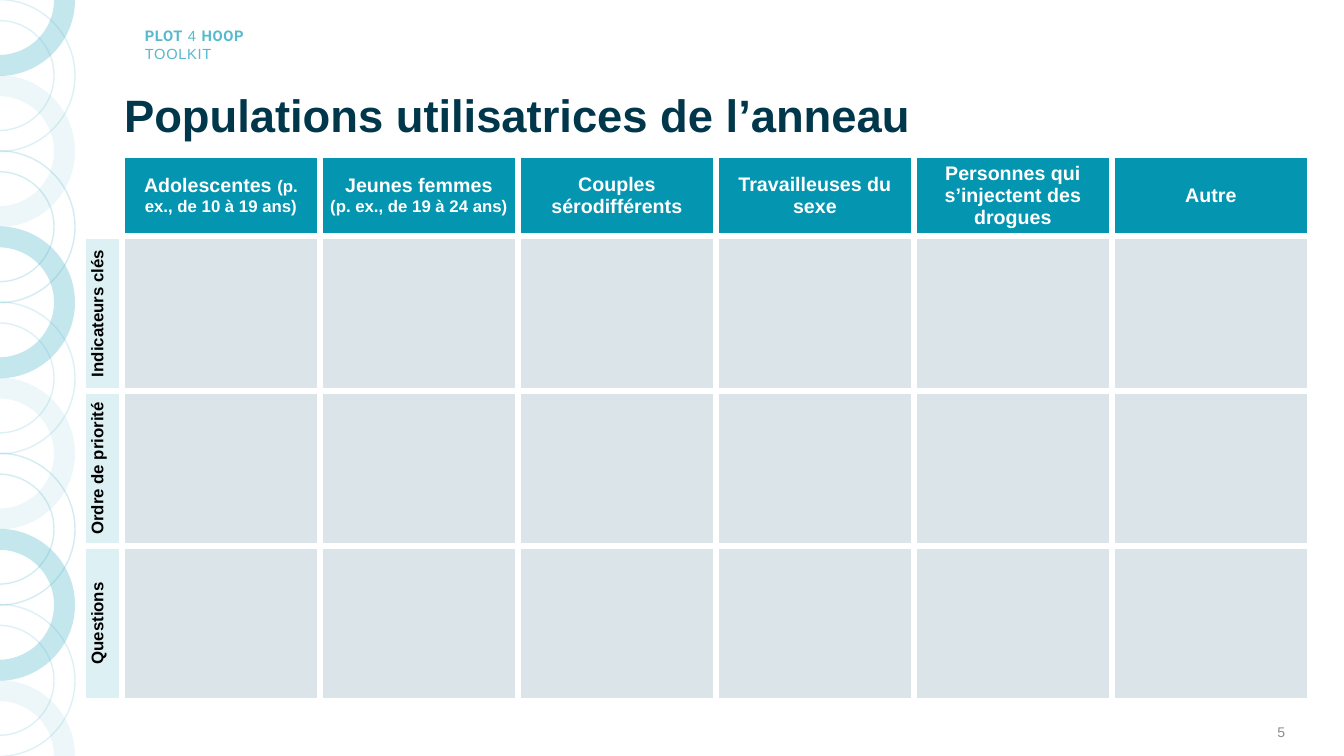
from dataclasses import dataclass
from math import cos, radians, sin
from typing import Optional

from lxml.etree import SubElement
from pptx import Presentation
from pptx.dml.color import RGBColor
from pptx.dml.fill import FillFormat
from pptx.enum.text import MSO_ANCHOR, PP_ALIGN
from pptx.oxml.ns import qn
from pptx.slide import Slide
from pptx.table import _Cell
from pptx.text.text import TextFrame
from pptx.util import Pt

SCALE = 914400 / 100.8
PAGE_WIDTH, PAGE_HEIGHT = 1344, 756
WHITE = RGBColor(0xFF, 0xFF, 0xFF)
BLACK = RGBColor(0x00, 0x00, 0x00)
NAVY = RGBColor(0x00, 0x37, 0x4B)
GREY = RGBColor(0x8C, 0x8C, 0x8C)
SKY = RGBColor(0x56, 0xB9, 0xCC)
TEAL = RGBColor(0x04, 0x95, 0xB0)
PALE_TEAL = RGBColor(0xDD, 0xF1, 0xF5)
PALE_GREY = RGBColor(0xDB, 0xE5, 0xE9)

RING_COUNT = 11
RING_CENTRE_X = -1
RING_OUTER, RING_INNER = 76, 55
QUARTER = 90
DEGREE = 60000
TABLE_LEFT, TABLE_TOP = 83, 155
LABEL_WIDTH, COLUMN_WIDTH = 39, 198
HEADER_HEIGHT, ROW_HEIGHT = 81, 155
CELL_MARGIN = 8


@dataclass(frozen=True)
class Span:
    text: str
    size: float
    bold: bool = True
    font: str = "Arial"
    spacing: float = 0


@dataclass(frozen=True)
class RingStyle:
    filled: bool
    opacity: int


@dataclass(frozen=True)
class Corner:
    radius: int
    angle: int


RING_STYLES = [
    RingStyle(True, 35),
    RingStyle(False, 20),
    RingStyle(True, 10),
    RingStyle(False, 25),
]
BREAK = Span("\n", 10.5)
TOOLKIT_NAME = [[
    Span("PLOT", 10.5, font="Roboto", spacing=0.5),
    Span(" 4 ", 10.5, bold=False, spacing=0.5),
    Span("HOOP", 10.5, font="Roboto", spacing=0.5),
    BREAK,
    Span("TOOLKIT", 10.5, bold=False, spacing=0.5),
]]
POPULATIONS = [
    [[Span("Adolescentes ", 14), Span("(p. ex., de 10 à 19 ans)", 12)]],
    [[Span("Jeunes femmes", 14)], [Span("(p. ex., de 19 à 24 ans)", 12)]],
    [[Span("Couples sérodifférents", 14)]],
    [[Span("Travailleuses du sexe", 14)]],
    [[Span("Personnes qui s’injectent des drogues", 14)]],
    [[Span("Autre", 14)]],
]
TOPICS = ["Indicateurs clés", "Ordre de priorité", "Questions"]


def px(length: float) -> int:
    return round(length * SCALE)


def write_text(frame: TextFrame, lines: list[list[Span]], *, color: RGBColor,
               align: PP_ALIGN = PP_ALIGN.LEFT,
               line_spacing: Optional[float] = None) -> None:
    for index, spans in enumerate(lines):
        para = frame.paragraphs[0] if index == 0 else frame.add_paragraph()
        para.alignment = align
        para.line_spacing = line_spacing
        for span in spans:
            if span is BREAK:
                para.add_line_break()
                continue
            run = para.add_run()
            run.text = span.text
            run.font.size = Pt(span.size)
            run.font.bold = span.bold
            run.font.name = span.font
            run.font.color.rgb = color
            if span.spacing:
                run.font._element.set("spc", str(round(span.spacing * 100)))


def add_text(page: Slide, left: int, top: int, width: int, height: int,
             lines: list[list[Span]], *, color: RGBColor, wrap: bool = True,
             align: PP_ALIGN = PP_ALIGN.LEFT,
             anchor: MSO_ANCHOR = MSO_ANCHOR.TOP) -> None:
    box = page.shapes.add_textbox(px(left), px(top), px(width), px(height))
    box.text_frame.word_wrap = wrap
    box.text_frame.vertical_anchor = anchor
    write_text(box.text_frame, lines, color=color, align=align)


def paint(fill: FillFormat, color: RGBColor, opacity: int) -> None:
    fill.solid()
    fill.fore_color.rgb = color
    tint = fill._xPr.find(qn("a:solidFill")).find(qn("a:srgbClr"))
    SubElement(tint, qn("a:alpha")).set("val", str(opacity * 1000))


def add_ring(page: Slide, position: int) -> None:
    style = RING_STYLES[position % len(RING_STYLES)]
    centre_y = PAGE_HEIGHT * position / (RING_COUNT - 1)
    first = 0 if position == 0 else -QUARTER
    last = 0 if position == RING_COUNT - 1 else QUARTER
    angles = range(first, last + 1, QUARTER)
    corners = [Corner(RING_OUTER, angle) for angle in angles]
    corners += [Corner(RING_INNER, angle) for angle in reversed(angles)]
    points = [(px(RING_CENTRE_X + corner.radius * cos(radians(corner.angle))),
               px(centre_y + corner.radius * sin(radians(corner.angle))))
              for corner in corners]
    builder = page.shapes.build_freeform(*points[0])
    builder.add_line_segments(points[1:], close=True)
    ring = builder.convert_to_shape()
    segments = list(ring._element.iter(qn("a:lnTo")))
    for segment, start, end in zip(segments, corners, corners[1:]):
        if start.radius == end.radius:
            outline = segment.getparent()
            arc = SubElement(outline, qn("a:arcTo"))
            arc.set("wR", str(px(start.radius)))
            arc.set("hR", str(px(start.radius)))
            arc.set("stAng", str(start.angle % 360 * DEGREE))
            arc.set("swAng", str((end.angle - start.angle) * DEGREE))
            outline.replace(segment, arc)
    ring.shadow.inherit = False
    if style.filled:
        paint(ring.fill, SKY, style.opacity)
        ring.line.fill.background()
    else:
        ring.fill.background()
        ring.line.width = Pt(1)
        paint(ring.line.fill, SKY, style.opacity)


def format_cell(cell: _Cell, color: RGBColor) -> None:
    cell.fill.solid()
    cell.fill.fore_color.rgb = color
    cell.vertical_anchor = MSO_ANCHOR.MIDDLE
    cell.margin_left = cell.margin_right = px(CELL_MARGIN)
    properties = cell._tc.get_or_add_tcPr()
    for index, side in enumerate(("lnL", "lnR", "lnT", "lnB")):
        border = SubElement(properties, qn(f"a:{side}"))
        border.set("w", str(Pt(4.5)))
        solid = SubElement(border, qn("a:solidFill"))
        SubElement(solid, qn("a:srgbClr")).set("val", str(WHITE))
        properties.insert(index, border)


def add_population_table(page: Slide) -> None:
    columns, rows = len(POPULATIONS), len(TOPICS)
    table = page.shapes.add_table(
        rows + 1, columns + 1, px(TABLE_LEFT), px(TABLE_TOP),
        px(LABEL_WIDTH + columns * COLUMN_WIDTH),
        px(HEADER_HEIGHT + rows * ROW_HEIGHT)).table
    table.first_row = table.horz_banding = False
    for index, column in enumerate(table.columns):
        column.width = px(COLUMN_WIDTH if index else LABEL_WIDTH)
    for index, row in enumerate(table.rows):
        row.height = px(ROW_HEIGHT if index else HEADER_HEIGHT)
        for position, cell in enumerate(row.cells):
            if index and position:
                format_cell(cell, PALE_GREY)
            elif index:
                format_cell(cell, PALE_TEAL)
                cell._tc.get_or_add_tcPr().set("vert", "vert270")
                write_text(cell.text_frame, [[Span(TOPICS[index - 1], 12)]],
                           color=BLACK, align=PP_ALIGN.CENTER)
            elif position:
                format_cell(cell, TEAL)
                write_text(cell.text_frame, POPULATIONS[position - 1],
                           color=WHITE, align=PP_ALIGN.CENTER)
            else:
                format_cell(cell, WHITE)


def add_title(page: Slide, text: str) -> None:
    title = page.shapes.title
    title.left, title.top = px(114), px(90)
    title.width, title.height = px(1116), px(56)
    title.text_frame.vertical_anchor = MSO_ANCHOR.MIDDLE
    write_text(title.text_frame, [[Span(text, 32.4)]], color=NAVY, line_spacing=0.9)


def main() -> None:
    deck = Presentation()
    deck.slide_width, deck.slide_height = px(PAGE_WIDTH), px(PAGE_HEIGHT)
    page = deck.slides.add_slide(deck.slide_layouts.get_by_name("Title Only"))
    add_text(page, 135, 22, 185, 28, TOOLKIT_NAME, color=SKY, wrap=False)
    for position in range(RING_COUNT):
        add_ring(page, position)
    add_population_table(page)
    add_title(page, "Populations utilisatrices de l’anneau")
    add_text(page, 993, 712, 302, 40, [[Span("5", 10, bold=False)]], color=GREY,
             align=PP_ALIGN.RIGHT, anchor=MSO_ANCHOR.MIDDLE)
    deck.save("out.pptx")


if __name__ == "__main__":
    main()
